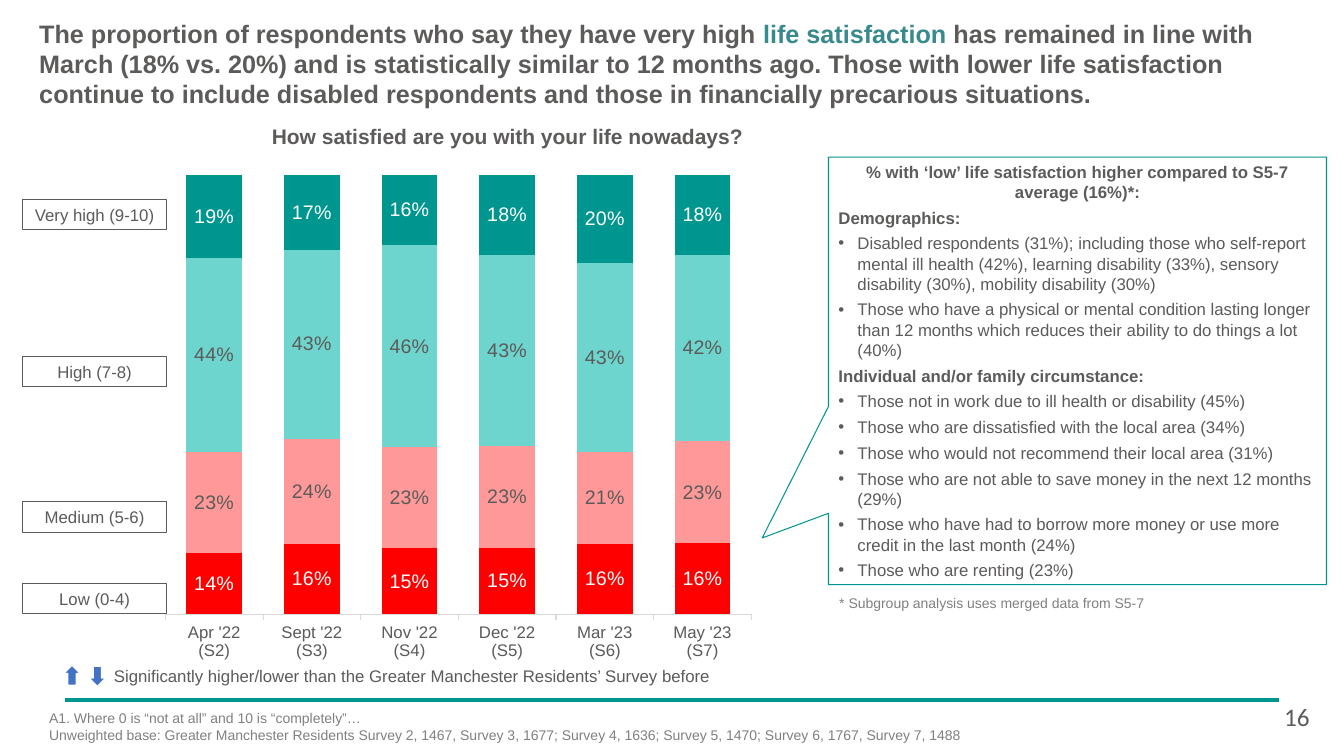
import pptx
import pptx.chart.data
import pptx.dml.color
import pptx.enum.chart
import pptx.enum.dml
import pptx.enum.shapes
import pptx.enum.text
import pptx.oxml
import pptx.util
from dataclasses import dataclass
from lxml import etree

Cm = pptx.util.Cm
Pt = pptx.util.Pt
Shape = pptx.enum.shapes.MSO_SHAPE
Align = pptx.enum.text.PP_ALIGN
rgb = pptx.dml.color.RGBColor.from_string


@dataclass(frozen=True)
class Theme:
    font: str = "Arial"
    number_font: str = "Calibri"
    text: str = "5C5B5A"
    muted: str = "808080"
    teal: str = "009690"
    title_accent: str = "388A8C"
    mint: str = "6DD5CE"
    pink: str = "FF9999"
    red: str = "FF0000"
    blue: str = "4472C4"
    axis: str = "D9D9D9"
    white: str = "FFFFFF"
    title_size: int = 18
    heading_size: int = 15
    value_size: int = 14
    body_size: int = 12
    note_size: int = 10


theme = Theme()


def style_font(font, size, color, bold=False, name=theme.font):
    font.name, font.size, font.bold = name, Pt(size), bold
    font.color.rgb = rgb(color)


def add_text(page, place, text, size, color=theme.text, bold=False, wrap=True, name=theme.font):
    box = page.shapes.add_textbox(*map(Cm, place))
    box.text_frame.word_wrap = wrap
    box.text_frame.text = text
    for para in box.text_frame.paragraphs:
        for span in para.runs:
            style_font(span.font, size, color, bold, name)
    return box


deck = pptx.Presentation()
deck.slide_width, deck.slide_height = Cm(33.87), Cm(19.05)
page = deck.slides.add_slide(deck.slide_layouts[6])

# Footer rule
rule = page.shapes.add_connector(
    pptx.enum.shapes.MSO_CONNECTOR.STRAIGHT, Cm(1.63), Cm(17.63), Cm(32.23), Cm(17.63))
rule.line.color.rgb = rgb(theme.teal)
rule.line.width = Pt(3)
etree.SubElement(rule.element.spPr, pptx.oxml.ns.qn("a:effectLst"))

# Title with one highlighted phrase
title = add_text(page, (0.99, 0.46, 31.9, 2.31),
                 "The proportion of respondents who say they have very high ",
                 theme.title_size, bold=True)
frame = title.text_frame
frame.margin_left = frame.margin_right = frame.margin_top = frame.margin_bottom = 0
for text, color in (
    ("life satisfaction ", theme.title_accent),
    ("has remained in line with March (18% vs. 20%) and is statistically similar to "
     "12 months ago. Those with lower life satisfaction continue to include disabled "
     "respondents and those in financially precarious situations.", theme.text),
):
    span = frame.paragraphs[0].add_run()
    span.text = text
    style_font(span.font, theme.title_size, color, True)

add_text(page, (6.6, 3, 12.5, 0.89), "How satisfied are you with your life nowadays?",
         theme.heading_size, bold=True, wrap=False)

# Band labels beside the chart
for label, top in (("Very high (9-10)", 5.03), ("High (7-8)", 8.99),
                   ("Medium (5-6)", 12.65), ("Low (0-4)", 14.71)):
    box = add_text(page, (0.58, top, 3.61, 0.76), label, theme.body_size)
    box.text_frame.vertical_anchor = pptx.enum.text.MSO_ANCHOR.MIDDLE
    box.text_frame.paragraphs[0].alignment = Align.CENTER
    box.line.color.rgb = rgb(theme.text)
    box.line.width = Pt(0.75)

# Stacked chart, lowest band first
bands = (
    ("Low (0-4)", (0.14, 0.16, 0.15, 0.15, 0.16, 0.16), theme.red, theme.white),
    ("Medium (5-6)", (0.23, 0.24, 0.23, 0.23, 0.21, 0.23), theme.pink, theme.text),
    ("High (7-8)", (0.44, 0.43, 0.46, 0.43, 0.43, 0.42), theme.mint, theme.text),
    ("Very high (9-10)", (0.19, 0.17, 0.16, 0.18, 0.2, 0.18), theme.teal, theme.white),
)
data = pptx.chart.data.CategoryChartData(number_format="0%")
data.categories = ["Apr '22\n(S2)", "Sept '22\n(S3)", "Nov '22\n(S4)",
                   "Dec '22\n(S5)", "Mar '23\n(S6)", "May '23\n(S7)"]
for name, values, fill, ink in bands:
    data.add_series(name, values)
chart = page.shapes.add_chart(
    pptx.enum.chart.XL_CHART_TYPE.COLUMN_STACKED_100,
    Cm(2.87), Cm(4.01), Cm(16.23), Cm(13.34), data).chart
chart.has_legend = chart.has_title = False
style_font(chart.font, theme.body_size, theme.text)
plot = chart.plots[0]
plot.gap_width, plot.overlap, plot.vary_by_categories = 75, 100, False
for series, (name, values, fill, ink) in zip(plot.series, bands):
    series.format.fill.solid()
    series.format.fill.fore_color.rgb = rgb(fill)
    labels = series.data_labels
    labels.show_value = True
    labels.number_format, labels.number_format_is_linked = "0%", False
    labels.position = pptx.enum.chart.XL_LABEL_POSITION.CENTER
    style_font(labels.font, theme.value_size, ink)
chart.value_axis.visible = False
chart.value_axis.has_major_gridlines = False
chart.value_axis.maximum_scale = 1
chart.category_axis.format.line.color.rgb = rgb(theme.axis)
chart.category_axis.format.line.width = Pt(0.75)
style_font(chart.category_axis.tick_labels.font, theme.body_size, theme.text)

# Fixed inner plot area
plot_area = chart.plots[0]._element.getparent()
for old in plot_area.findall(pptx.oxml.ns.qn("c:layout")):
    plot_area.remove(old)
layout = etree.Element(pptx.oxml.ns.qn("c:layout"))
manual = etree.SubElement(layout, pptx.oxml.ns.qn("c:manualLayout"))
for tag, value in (("layoutTarget", "inner"), ("xMode", "edge"), ("yMode", "edge"),
                   ("x", "0.08"), ("y", "0.03"), ("w", "0.91"), ("h", "0.83")):
    etree.SubElement(manual, pptx.oxml.ns.qn("c:" + tag)).set("val", value)
plot_area.insert(0, layout)

# Significance key
for left, top, turn in ((2.24, 16.79, 0), (1.6, 16.76, 180)):
    arrow = page.shapes.add_shape(Shape.DOWN_ARROW, Cm(left), Cm(top), Cm(0.43), Cm(0.51))
    arrow.rotation = turn
    arrow.shadow.inherit = False
    arrow.fill.solid()
    arrow.fill.fore_color.rgb = rgb(theme.blue)
    arrow.line.color.rgb = rgb(theme.white)
    arrow.line.width = Pt(1)
add_text(page, (2.62, 16.66, 15.6, 0.76),
         "Significantly higher/lower than the Greater Manchester Residents’ Survey before",
         theme.body_size, wrap=False)

# Callout on low satisfaction
callout = page.shapes.add_shape(
    Shape.RECTANGULAR_CALLOUT, Cm(20.88), Cm(3.96), Cm(12.55), Cm(10.77))
callout.adjustments[0], callout.adjustments[1] = -0.633, 0.391
callout.shadow.inherit = False
callout.fill.solid()
callout.fill.fore_color.rgb = rgb(theme.white)
callout.line.color.rgb = rgb(theme.teal)
callout.line.width = Pt(0.75)
headings = ("% with ‘low’ life satisfaction higher compared to S5-7 average (16%)*:",
            "Demographics:", "Individual and/or family circumstance:")
callout.text_frame.text = "\n".join((
    headings[0],
    headings[1],
    "Disabled respondents (31%); including those who self-report mental ill health (42%), "
    "learning disability (33%), sensory disability (30%), mobility disability (30%)",
    "Those who have a physical or mental condition lasting longer than 12 months "
    "which reduces their ability to do things a lot (40%)",
    headings[2],
    "Those not in work due to ill health or disability (45%)",
    "Those who are dissatisfied with the local area (34%)",
    "Those who would not recommend their local area (31%)",
    "Those who are not able to save money in the next 12 months (29%)",
    "Those who have had to borrow more money or use more credit in the last month (24%)",
    "Those who are renting (23%)",
))
callout.text_frame.vertical_anchor = pptx.enum.text.MSO_ANCHOR.MIDDLE
for para in callout.text_frame.paragraphs:
    is_heading = para.text in headings
    para.alignment = Align.CENTER if para.text == headings[0] else Align.LEFT
    para.space_after = Pt(4)
    style_font(para.runs[0].font, theme.body_size, theme.text, is_heading)
    if not is_heading:
        properties = para._p.get_or_add_pPr()
        properties.set("marL", str(Cm(0.48)))
        properties.set("indent", str(-Cm(0.48)))
        etree.SubElement(properties, pptx.oxml.ns.qn("a:buFont")).set("typeface", theme.font)
        etree.SubElement(properties, pptx.oxml.ns.qn("a:buChar")).set("char", "•")

# Notes and page number
add_text(page, (20.9, 14.86, 9.65, 0.69), "* Subgroup analysis uses merged data from S5-7",
         theme.note_size, theme.muted)
add_text(page, (0.99, 17.75, 29.46, 1.47),
         "A1. Where 0 is “not at all” and 10 is “completely”…\n"
         "Unweighted base: Greater Manchester Residents Survey 2, 1467, Survey 3, 1677; "
         "Survey 4, 1636; Survey 5, 1470; Survey 6, 1767, Survey 7, 1488",
         theme.note_size, theme.muted)
add_text(page, (32.11, 17.55, 1.35, 1.02), "16", theme.title_size, name=theme.number_font)

deck.save("out.pptx")
